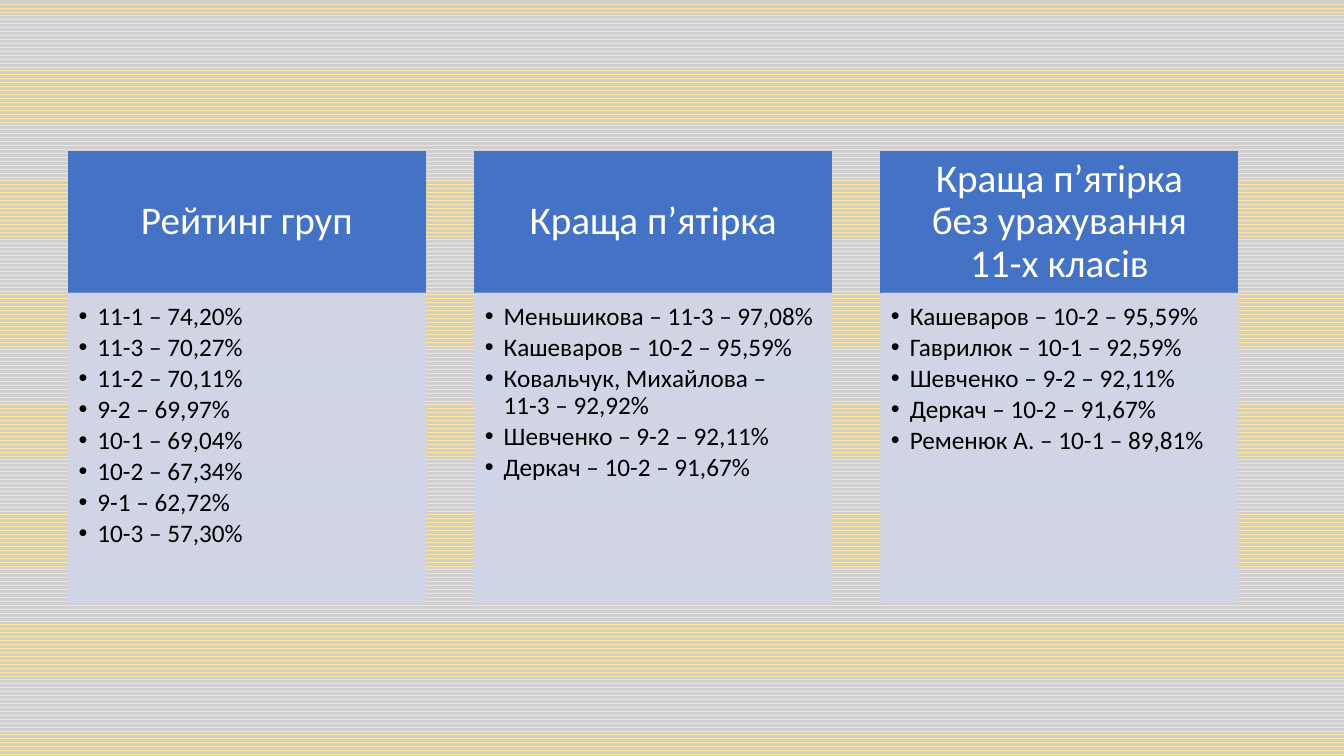
"""Build a slide with three ranking columns on a wave-patterned background."""
from copy import deepcopy
from dataclasses import dataclass

from lxml import etree
from pptx import Presentation
from pptx import util as u
from pptx.dml import color
from pptx.enum import dml, shapes, text
from pptx.oxml import ns


@dataclass
class Column:
    heading: str
    entries: list[str]


@dataclass
class Panel:
    top: float
    height: float
    fill: str
    opacity: int
    insets: tuple[float, float, float, float]
    anchor: text.MSO_ANCHOR


LEFT, WIDTH, PITCH = 48.9, 254.9, 290.2
HEADING = Panel(108, 101.5, "4472C4", 100, (15.8, 8.6, 15.8, 8.6), text.MSO_ANCHOR.MIDDLE)
LISTING = Panel(209.5, 221, "CFD5EA", 90, (7.2, 7.2, 10.1, 11.5), text.MSO_ANCHOR.TOP)
COLUMNS = [
    Column("Рейтинг груп", [
        "11-1 – 74,20%", "11-3 – 70,27%", "11-2 – 70,11%", "9-2 – 69,97%",
        "10-1 – 69,04%", "10-2 – 67,34%", "9-1 – 62,72%", "10-3 – 57,30%"]),
    Column("Краща п’ятірка", [
        "Меньшикова – 11-3 – 97,08%", "Кашеваров – 10-2 – 95,59%",
        "Ковальчук, Михайлова –\v11-3 – 92,92%",
        "Шевченко – 9-2 – 92,11%", "Деркач – 10-2 – 91,67%"]),
    Column("Краща п’ятірка без урахування 11-х класів", [
        "Кашеваров – 10-2 – 95,59%", "Гаврилюк – 10-1 – 92,59%",
        "Шевченко – 9-2 – 92,11%", "Деркач – 10-2 – 91,67%",
        "Ременюк А. – 10-1 – 89,81%"]),
]


def rgb(value: str) -> color.RGBColor:
    return color.RGBColor.from_string(value)


def style_panel(box, panel: Panel, left: float) -> None:
    box.left, box.top = u.Pt(left), u.Pt(panel.top)
    box.width, box.height = u.Pt(WIDTH), u.Pt(panel.height)
    box.shadow.inherit = False
    box.fill.solid()
    box.fill.fore_color.rgb = rgb(panel.fill)
    box.line.color.rgb = rgb(panel.fill)
    box.line.width = u.Pt(1)
    if panel.opacity < 100:
        for tint in box.element.spPr.iter(ns.qn("a:srgbClr")):
            etree.SubElement(tint, ns.qn("a:alpha"), val=str(panel.opacity * 1000))
    frame = box.text_frame
    frame.word_wrap = True
    frame.auto_size = text.MSO_AUTO_SIZE.NONE
    frame.vertical_anchor = panel.anchor
    (frame.margin_left, frame.margin_top,
     frame.margin_right, frame.margin_bottom) = map(u.Pt, panel.insets)


def write(para, content: str, *, size: float, tint: str,
          align=text.PP_ALIGN.LEFT, after: float = 0, bullet: bool = False) -> None:
    para.text = content
    para.alignment = align
    para.line_spacing = 0.9
    para.space_before = u.Pt(0)
    para.space_after = u.Pt(after)
    for span in para.runs:
        span.font.name = "Calibri"
        span.font.size = u.Pt(size)
        span.font.bold = False
        span.font.color.rgb = rgb(tint)
    for line_break in para._p.findall(ns.qn("a:br")):
        line_break.insert(0, deepcopy(para.runs[0]._r.rPr))
    if bullet:
        para.level = 1
        props = para._p.get_or_add_pPr()
        props.set("marL", str(u.Pt(13.5)))
        props.set("indent", str(-u.Pt(13.5)))
        etree.SubElement(props, ns.qn("a:buFont"), typeface="Arial")
        etree.SubElement(props, ns.qn("a:buChar"), char="•")


def main() -> None:
    deck = Presentation()
    deck.slide_width, deck.slide_height = u.Pt(960), u.Pt(540)
    comparison = deck.slide_layouts.get_by_name("Comparison")
    page = deck.slides.add_slide(comparison)
    backdrop = page.background.fill
    backdrop.patterned()
    backdrop.pattern = dml.MSO_PATTERN.WAVE
    backdrop.fore_color.rgb = rgb("FFE699")
    backdrop.back_color.rgb = rgb("D0CECE")

    title, second_heading, first_list, third_heading, second_list = page.placeholders
    third_list = page.shapes.add_shape(
        shapes.MSO_SHAPE.RECTANGLE, u.Pt(0), u.Pt(0), u.Pt(WIDTH), u.Pt(LISTING.height))
    headings = [title, second_heading, third_heading]
    lists = [first_list, second_list, third_list]

    for index, (column, heading, listing) in enumerate(zip(COLUMNS, headings, lists)):
        left = LEFT + index * PITCH
        style_panel(heading, HEADING, left)
        write(heading.text_frame.paragraphs[0], column.heading,
              size=28, tint="FFFFFF", align=text.PP_ALIGN.CENTER)
        style_panel(listing, LISTING, left)
        frame = listing.text_frame
        for row, entry in enumerate(column.entries):
            para = frame.add_paragraph() if row else frame.paragraphs[0]
            write(para, entry, size=18, tint="000000", after=2.7, bullet=True)
    deck.save("out.pptx")


if __name__ == "__main__":
    main()
